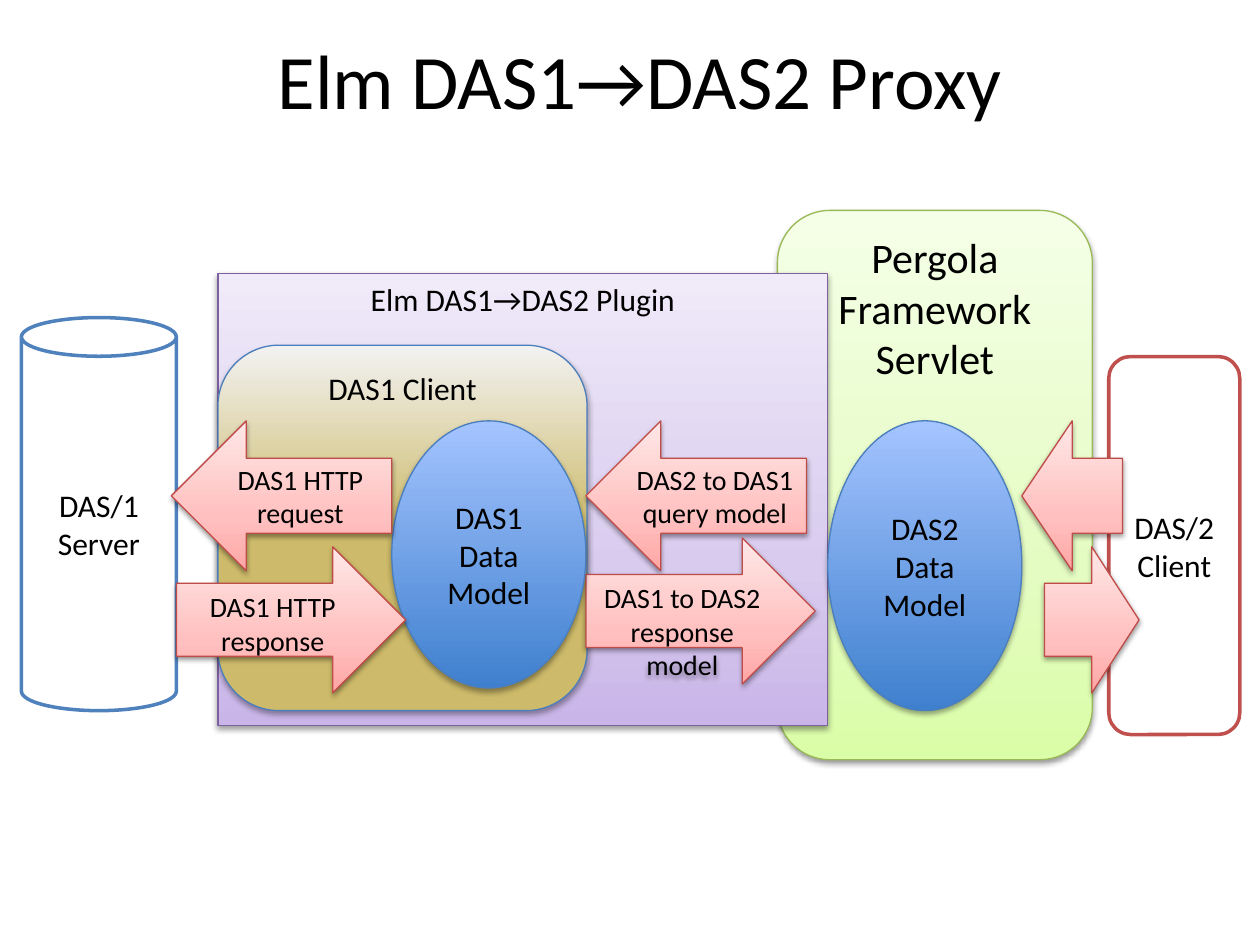
from dataclasses import dataclass

from pptx import Presentation
from pptx import util as u
from pptx.dml.color import RGBColor
from pptx.enum import shapes, text
from pptx.oxml import parse_xml
from pptx.oxml.ns import nsdecls

COLOURS = {
    "text": "000000",
    "white": "FFFFFF",
    "server": "4F81BD",
    "client": "C0504D",
    "green": "98B955",
    "purple": "7D60A0",
    "blue": "4B7EBC",
    "red": "BF4C48",
}
GRADIENTS = {
    "green": ((0, "DAFDA7"), (35, "E4FCC2"), (100, "F5FFE7")),
    "purple": ((0, "C9B5E8"), (35, "D8CBEE"), (100, "F0EAF9")),
    "tan": ((0, "CDBA6A"), (50, "CDBA6A"), (100, "F2F2F2")),
    "blue": ((0, "3F80CE"), (100, "A4C4FF")),
    "red": ((0, "FFA6A5"), (35, "FFC0BF"), (100, "FFE7E7")),
}
KIND = shapes.MSO_SHAPE
TOP = text.MSO_ANCHOR.TOP
MIDDLE = text.MSO_ANCHOR.MIDDLE


@dataclass(frozen=True)
class Component:
    kind: KIND
    left: float
    top: float
    width: float
    height: float
    line: str
    gradient: str = ""
    label: str = ""
    size: int = 18
    anchor: text.MSO_ANCHOR = MIDDLE
    shade: int = 38


def request_arrow(left: float, width: float, label: str = "") -> Component:
    return Component(KIND.LEFT_ARROW, left, 3.34, width, 1.19, "red", "red", label, 16)


def response_arrow(left: float, top: float, width: float, label: str = "") -> Component:
    return Component(KIND.RIGHT_ARROW, left, top, width, 1.16, "red", "red", label, 16, TOP)


def data_model(left: float, height: float, label: str) -> Component:
    return Component(KIND.OVAL, left, 3.34, 1.54, height, "blue", "blue", label, shade=35)


COMPONENTS = [
    Component(KIND.FLOWCHART_ALTERNATE_PROCESS, 6.17, 1.67, 2.5, 4.36, "green", "green",
              "Pergola Framework Servlet", 24, TOP),
    Component(KIND.RECTANGLE, 1.73, 2.17, 4.84, 3.59, "purple", "purple",
              "Elm DAS1→DAS2 Plugin", anchor=TOP),
    Component(KIND.ROUNDED_RECTANGLE, 1.73, 2.74, 2.93, 2.9, "blue", "tan",
              "DAS1 Client", anchor=TOP, shade=35),
    data_model(6.57, 2.3, "DAS2 Data Model"),
    request_arrow(4.65, 1.75, "DAS2 to DAS1 query model"),
    response_arrow(4.65, 4.27, 1.82, "DAS1 to DAS2 response model"),
    Component(KIND.CAN, 0.17, 2.52, 1.23, 3.12, "server", label="DAS/1 Server"),
    Component(KIND.ROUNDED_RECTANGLE, 8.8, 2.83, 1.04, 3, "client", label="DAS/2 Client"),
    response_arrow(8.29, 4.34, 0.75),
    request_arrow(8.11, 0.8),
    data_model(3.11, 2.12, "DAS1 Data Model"),
    request_arrow(1.36, 1.75, "DAS1 HTTP request"),
    response_arrow(1.4, 4.34, 1.82, "DAS1 HTTP response"),
]


def write_text(holder, wording: str, *, size: int, anchor: text.MSO_ANCHOR = MIDDLE) -> None:
    frame = holder.text_frame
    frame.word_wrap = True
    frame.vertical_anchor = anchor
    paragraph = frame.paragraphs[0]
    paragraph.alignment = text.PP_ALIGN.CENTER
    run = paragraph.add_run()
    run.text = wording
    run.font.name = "Calibri"
    run.font.size = u.Pt(size)
    run.font.color.rgb = RGBColor.from_string(COLOURS["text"])


def apply_gradient(shape, name: str) -> None:
    stops = "".join(
        f'<a:gs pos="{position * 1000}"><a:srgbClr val="{colour}"/></a:gs>'
        for position, colour in GRADIENTS[name]
    )
    gradient = parse_xml(
        f'<a:gradFill {nsdecls("a")} rotWithShape="1"><a:gsLst>{stops}</a:gsLst>'
        '<a:lin ang="16200000" scaled="0"/></a:gradFill>'
    )
    shape._element.spPr.prstGeom.addnext(gradient)


def apply_shadow(shape, shade: int) -> None:
    distance = 1.6 if shade == 38 else 1.8
    shadow = parse_xml(
        f'<a:outerShdw {nsdecls("a")} blurRad="{u.Pt(3.1)}" dist="{u.Pt(distance)}" '
        'dir="5400000" rotWithShape="0"><a:srgbClr val="000000">'
        f'<a:alpha val="{shade * 1000}"/></a:srgbClr></a:outerShdw>'
    )
    shape._element.spPr.effectLst.append(shadow)


def draw_component(slide, component: Component) -> None:
    shape = slide.shapes.add_shape(
        component.kind, u.Inches(component.left), u.Inches(component.top),
        u.Inches(component.width), u.Inches(component.height))
    shape.shadow.inherit = False
    shape.line.color.rgb = RGBColor.from_string(COLOURS[component.line])
    if component.gradient:
        shape.line.width = u.Pt(0.75)
        apply_gradient(shape, component.gradient)
        apply_shadow(shape, component.shade)
    else:
        shape.line.width = u.Pt(2)
        shape.fill.solid()
        shape.fill.fore_color.rgb = RGBColor.from_string(COLOURS["white"])
    if component.label:
        write_text(shape, component.label, size=component.size, anchor=component.anchor)


def main() -> None:
    deck = Presentation()
    deck.slide_width, deck.slide_height = u.Inches(10), u.Inches(7.5)
    slide = deck.slides.add_slide(deck.slide_layouts[6])
    title = slide.shapes.add_textbox(u.Inches(0.58), u.Inches(0), u.Inches(9), u.Inches(1.25))
    write_text(title, "Elm DAS1→DAS2 Proxy", size=44)
    for component in COMPONENTS:
        draw_component(slide, component)
    deck.save("out.pptx")


if __name__ == "__main__":
    main()
